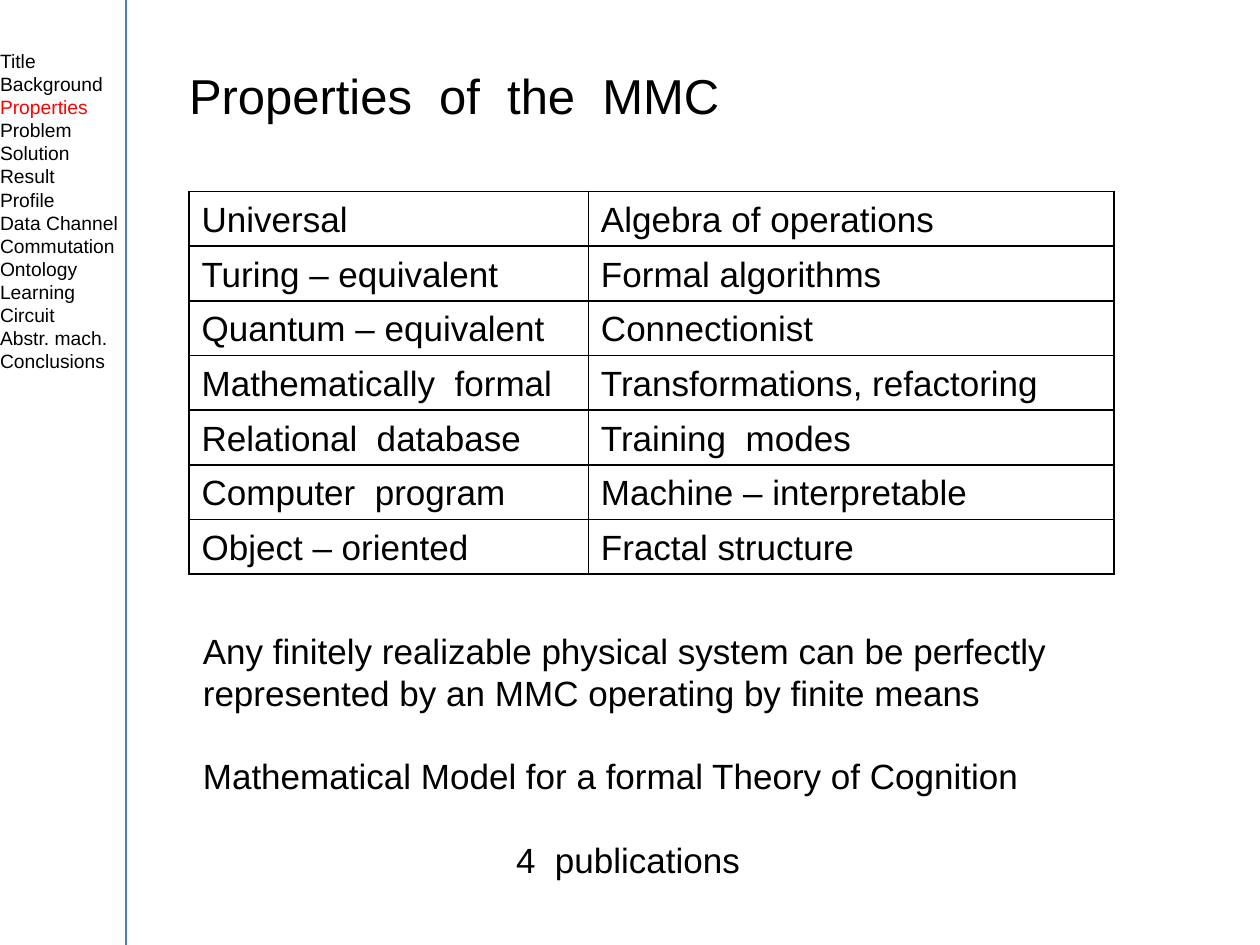
from lxml.etree import SubElement
from pptx import Presentation
from pptx.dml.color import RGBColor
from pptx.enum.shapes import MSO_CONNECTOR as Connector
from pptx.enum.text import MSO_ANCHOR as Anchor, MSO_AUTO_SIZE as AutoSize, PP_ALIGN as Align
from pptx.oxml.ns import qn
from pptx.util import Inches, Pt


def color(value):
    return RGBColor.from_string(value)


def write(frame, lines, size=20, margin=0, gap=0, last_align=Align.LEFT, active=None):
    """Fill a text frame with plain paragraphs; the active line is red."""
    frame.word_wrap = True
    frame.vertical_anchor = Anchor.TOP
    frame.margin_left = frame.margin_right = Inches(margin)
    frame.margin_top = frame.margin_bottom = Inches(margin / 2)
    for index, line in enumerate(lines):
        para = frame.paragraphs[0] if index == 0 else frame.add_paragraph()
        para.alignment = last_align if line == lines[-1] else Align.LEFT
        para.line_spacing = Pt(size * 1.2)
        para.space_before = Pt(gap if index else 0)
        properties = para._p.get_or_add_pPr()
        properties.set("marL", "0")
        properties.set("indent", "0")
        SubElement(properties, qn("a:buNone"))
        span = para.add_run()
        span.text = line
        span.font.name = "Arial"
        span.font.size = Pt(size)
        span.font.color.rgb = color("FF0000" if line == active else "000000")


deck = Presentation()
deck.slide_width, deck.slide_height = Inches(10), Inches(7.5)
page = deck.slides.add_slide(deck.slide_layouts[1])
sidebar_width = deck.slide_width // 10
table_left = sidebar_width * 3 // 2
text_left = Inches(1.61)

# Title and sidebar
title, sections = page.placeholders
title.left, title.top, title.width, title.height = (
    table_left, Inches(0.52), Inches(7.33), Inches(0.47))
write(title.text_frame, ["Properties  of  the  MMC"], size=28)
sections.left, sections.top, sections.width, sections.height = (
    0, Inches(0.39), sidebar_width, Inches(2.59))
write(sections.text_frame,
      ["Title", "Background", "Properties", "Problem", "Solution", "Result", "Profile",
       "Data Channel", "Commutation", "Ontology", "Learning", "Circuit",
       "Abstr. mach.", "Conclusions"],
      size=11, active="Properties")
for shape in (title, sections):
    shape.text_frame.auto_size = AutoSize.NONE

divider = page.shapes.add_connector(
    Connector.STRAIGHT, sidebar_width, 0, sidebar_width, deck.slide_height)
divider.line.color.rgb = color("4B7EBC")
divider.line.width = Pt(0.75)
SubElement(divider._element.spPr, qn("a:effectLst"))

# Table of properties
properties_list = [
    ("Universal", "Algebra of operations"),
    ("Turing – equivalent", "Formal algorithms"),
    ("Quantum – equivalent", "Connectionist"),
    ("Mathematically  formal", "Transformations, refactoring"),
    ("Relational  database", "Training  modes"),
    ("Computer  program", "Machine – interpretable"),
    ("Object – oriented", "Fractal structure"),
]
table = page.shapes.add_table(
    len(properties_list), 2, table_left, Inches(1.52), Inches(7.34), Inches(3.03)).table
table.first_row = table.horz_banding = False
for column, width in zip(table.columns, (3.17, 4.17)):
    column.width = Inches(width)
for row, texts in zip(table.rows, properties_list):
    for cell, text in zip(row.cells, texts):
        write(cell.text_frame, [text])
        cell.margin_left = cell.margin_right = Inches(0.1)
        cell.margin_top = cell.margin_bottom = Inches(0.05)
        cell_properties = cell._tc.get_or_add_tcPr()
        for side in ("lnL", "lnR", "lnT", "lnB"):
            border = SubElement(cell_properties, qn(f"a:{side}"), w=str(Pt(1)))
            fill = SubElement(border, qn("a:solidFill"))
            SubElement(fill, qn("a:srgbClr"), val="000000")
        cell.fill.background()

# Closing statements
claim = page.shapes.add_textbox(text_left, Inches(5), Inches(7.11), Inches(0.67))
write(claim.text_frame, ["Any finitely realizable physical system can be perfectly "
                         "represented by an MMC operating by finite means"])
outlook = page.shapes.add_textbox(text_left, Inches(5.99), Inches(6.75), Inches(1.01))
write(outlook.text_frame,
      ["Mathematical Model for a formal Theory of Cognition", "4  publications"],
      gap=24, last_align=Align.CENTER)

deck.save("out.pptx")
